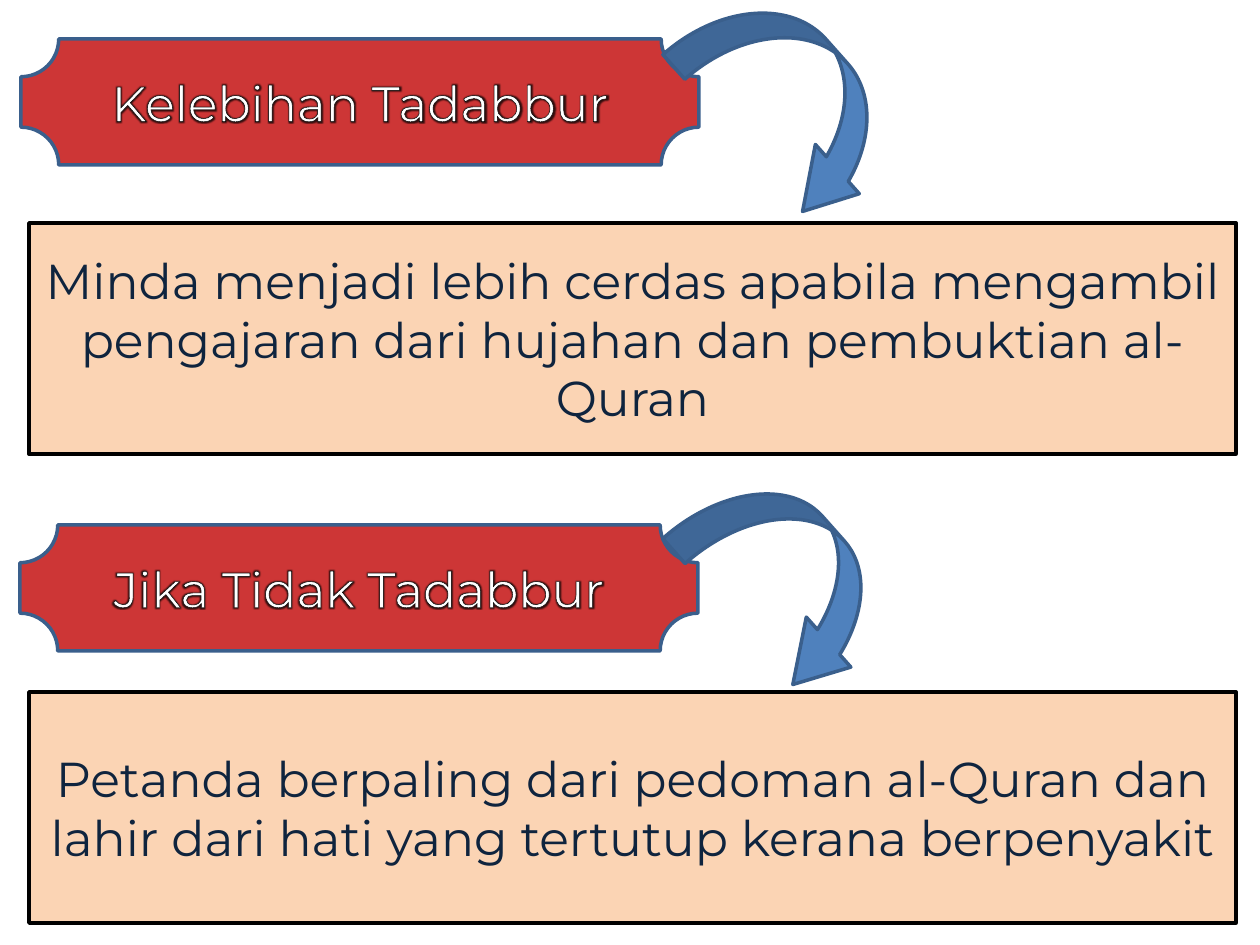
from lxml import etree
from pptx import Presentation
from pptx.dml.color import RGBColor
from pptx.enum.shapes import MSO_SHAPE
from pptx.enum.text import MSO_ANCHOR, PP_ALIGN
from pptx.oxml.ns import qn
from pptx.util import Emu, Pt

PLAQUE = MSO_SHAPE.PLAQUE
RECT = MSO_SHAPE.RECTANGLE
ARROW = MSO_SHAPE.CURVED_LEFT_ARROW
CENTER = PP_ALIGN.CENTER
MIDDLE = MSO_ANCHOR.MIDDLE

SCALE = 914400 / 126  # EMU per px
FONT = "Montserrat"
COLORS = {
    "red": "C00000",
    "peach": "FAC090",
    "blue": "4F81BD",
    "edge": "3A5F8C",
    "navy": "0F243E",
    "black": "000000",
    "white": "FFFFFF",
}


def px(num):
    return Emu(round(num * SCALE))


def rgb(name):
    return RGBColor.from_string(COLORS[name])


def add_alpha(color, share):
    etree.SubElement(color, qn("a:alpha"), val=str(share * 1000))


def add_form(slide, kind, box, fill, line, alpha=100):
    form = slide.shapes.add_shape(kind, *map(px, box))
    form.shadow.inherit = False
    form.fill.solid()
    form.fill.fore_color.rgb = rgb(fill)
    if alpha < 100:
        fill_xml = form._element.spPr.find(qn("a:solidFill"))
        add_alpha(fill_xml[0], alpha)
    form.line.color.rgb = rgb(line)
    form.line.width = Pt(2)
    return form


def add_text(form, text, color):
    frame = form.text_frame
    frame.word_wrap = True
    frame.vertical_anchor = MIDDLE
    para = frame.paragraphs[0]
    para.alignment = CENTER
    run = para.add_run()
    run.text = text
    run.font.size = Pt(28)
    run.font.name = FONT
    run.font.color.rgb = rgb(color)
    return run


def add_glow(run):
    """Give the letters a thin black outline and a soft dark glow."""
    props = run.font._element
    line = etree.Element(qn("a:ln"), w=str(Pt(0.75)))
    fill = etree.SubElement(line, qn("a:solidFill"))
    etree.SubElement(fill, qn("a:srgbClr"), val=COLORS["black"])
    props.insert(0, line)
    effect = etree.Element(qn("a:effectLst"))
    glow = etree.SubElement(effect, qn("a:glow"), rad=str(Pt(3)))
    color = etree.SubElement(glow, qn("a:srgbClr"), val=COLORS["black"])
    add_alpha(color, 75)
    props.find(qn("a:solidFill")).addnext(effect)


def add_head(slide, left, top, text):
    head = add_form(slide, PLAQUE, (left, top, 678, 126), "red", "edge", 79)
    head.adjustments[0] = 0.3
    add_glow(add_text(head, text, "white"))


def add_body(slide, top, text):
    body = add_form(slide, RECT, (29, top, 1207, 231), "peach", "black", 67)
    add_text(body, text, "navy")


def add_arrow(slide, box):
    arrow = add_form(slide, ARROW, box, "blue", "edge")
    arrow.rotation = 318.3
    for num, size in enumerate((0.25, 0.5, 0.41)):
        arrow.adjustments[num] = size


def main():
    deck = Presentation()
    deck.slide_width, deck.slide_height = px(1260), px(945)
    slide = deck.slides.add_slide(deck.slide_layouts[6])

    # Merits of reflection
    add_body(slide, 223, "Minda menjadi lebih cerdas apabila mengambil "
             "pengajaran dari hujahan dan pembuktian al-Quran")
    add_head(slide, 21, 39, "Kelebihan Tadabbur")
    add_arrow(slide, (727, -20, 132, 243))

    # Lack of reflection
    add_head(slide, 20, 525, "Jika Tidak Tadabbur")
    add_arrow(slide, (722, 465, 134, 229))
    add_body(slide, 692, "Petanda berpaling dari pedoman al-Quran dan "
             "lahir dari hati yang tertutup kerana berpenyakit")

    deck.save("out.pptx")


if __name__ == "__main__":
    main()
